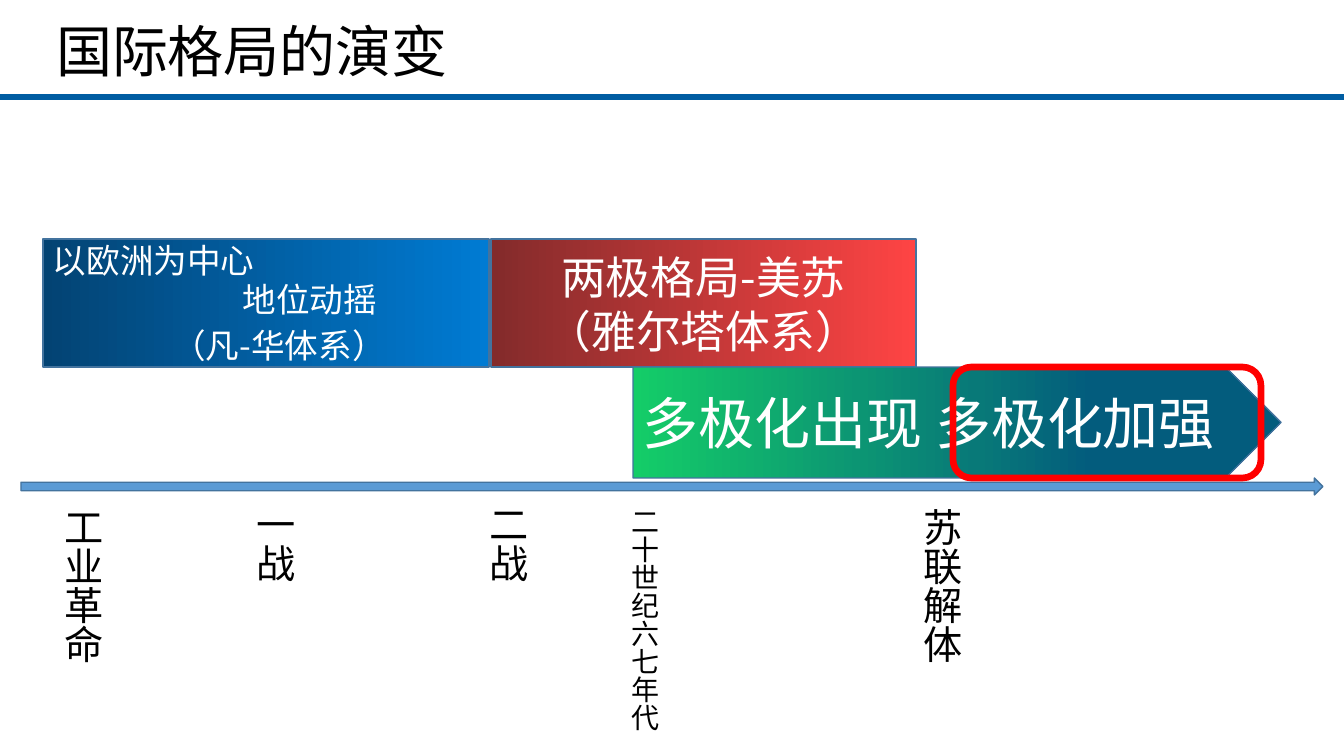
from lxml import etree
from pptx import Presentation
from pptx import util as u
from pptx.dml.color import RGBColor
from pptx.enum import shapes, text
from pptx.oxml.ns import qn

WHITE = RGBColor(0xFF, 0xFF, 0xFF)
BLACK = RGBColor(0, 0, 0)
RED = RGBColor(0xFF, 0, 0)
BLUE = RGBColor(0x00, 0x5D, 0xA2)
SKY = RGBColor(0x5B, 0x9B, 0xD5)
EDGE = RGBColor(0x43, 0x73, 0x9E)
NAVY = RGBColor(0x03, 0x43, 0x73)
AZURE = RGBColor(0x00, 0x7B, 0xD3)
WINE = RGBColor(0x83, 0x2B, 0x2B)
CORAL = RGBColor(0xFE, 0x44, 0x44)
GREEN = RGBColor(0x14, 0xCD, 0x68)
JADE = RGBColor(0x0C, 0x95, 0x73)
TEAL = RGBColor(0x08, 0x79, 0x78)
DEEP = RGBColor(0x03, 0x5C, 0x7D)

FONT = "Noto Sans CJK SC"
KIND = shapes.MSO_SHAPE
LEFT = text.PP_ALIGN.LEFT
MID = text.PP_ALIGN.CENTER


def px(n):
    return u.Emu(round(n * 914400 / 100.8))


def write(para, words, size=28, color=BLACK, align=LEFT, pitch=None, indent=0):
    para.alignment = align
    if pitch:
        para.line_spacing = u.Pt(pitch)
    if indent:
        props = para._p.get_or_add_pPr()
        props.set("marL", str(px(indent)))
        props.set("indent", "0")
    run = para.add_run()
    run.text = words
    run.font.size = u.Pt(size)
    run.font.color.rgb = color
    run.font.name = FONT
    etree.SubElement(run._r.rPr, qn("a:ea")).set("typeface", FONT)


class Board:
    """Draws styled elements on one slide."""

    def __init__(self, slide):
        self.slide = slide

    def title(self, words, *box):
        head = self.slide.shapes.title
        head.left, head.top, head.width, head.height = map(px, box)
        head.text_frame.vertical_anchor = text.MSO_ANCHOR.MIDDLE
        write(head.text_frame.paragraphs[0], words, size=40)

    def rule(self, y, width):
        line = self.slide.shapes.add_connector(
            shapes.MSO_CONNECTOR.STRAIGHT, 0, px(y), px(width), px(y))
        line.line.color.rgb = BLUE
        line.line.width = u.Pt(4)
        etree.SubElement(line._element.spPr, qn("a:effectLst"))

    def shape(self, kind, *box, fill=None, edge=EDGE, width=1):
        item = self.slide.shapes.add_shape(kind, *map(px, box))
        item.shadow.inherit = False
        item.line.color.rgb = edge
        item.line.width = u.Pt(width)
        if fill:
            item.fill.solid()
            item.fill.fore_color.rgb = fill
        else:
            item.fill.background()
        return item

    def era(self, kind, *box, stops, lines):
        item = self.shape(kind, *box)
        item.fill.gradient()
        item.fill.gradient_angle = 0
        ramp = item._element.spPr.find(qn("a:gradFill")).find(qn("a:gsLst"))
        for old in list(ramp):
            ramp.remove(old)
        for pos, color in stops:
            stop = etree.SubElement(ramp, qn("a:gs"), pos=str(pos * 1000))
            etree.SubElement(stop, qn("a:srgbClr"), val=str(color))
        frame = item.text_frame
        frame.word_wrap = True
        frame.vertical_anchor = text.MSO_ANCHOR.MIDDLE
        for i, (words, style) in enumerate(lines):
            para = frame.add_paragraph() if i else frame.paragraphs[0]
            write(para, words, color=WHITE, **style)

    def label(self, words, *box, size=28):
        frame = self.slide.shapes.add_textbox(*map(px, box)).text_frame
        frame.word_wrap = False
        frame._txBody.bodyPr.set("vert", "eaVert")
        write(frame.paragraphs[0], words, size=size, pitch=size * 1.2)


def main():
    deck = Presentation()
    deck.slide_width, deck.slide_height = px(1344), px(756)
    board = Board(deck.slides.add_slide(deck.slide_layouts[5]))
    board.rule(97, 1344)
    board.title("国际格局的演变", 46, 11, 412, 78)
    board.shape(KIND.RIGHT_ARROW, 21, 478, 1302, 17, fill=SKY)
    board.era(KIND.RECTANGLE, 43, 239, 446, 128,
              stops=[(0, NAVY), (100, AZURE)],
              lines=[("以欧洲为中心", dict(size=24, pitch=28)),
                     ("地位动摇", dict(size=24, pitch=28, align=MID, indent=88)),
                     ("（凡-华体系）", dict(size=24, pitch=33, align=MID, indent=26))])
    board.era(KIND.RECTANGLE, 491, 239, 425, 128,
              stops=[(0, WINE), (100, CORAL)],
              lines=[(words, dict(size=32, pitch=39, align=MID))
                     for words in ("两极格局-美苏", "（雅尔塔体系）")])
    for words, x, y, high in (("工业革命", 43, 498, 167), ("一战", 235, 495, 89),
                              ("二战", 468, 495, 89), ("苏联解体", 902, 498, 167)):
        board.label(words, x, y, 68, high)
    board.label("二十世纪六七年代", 612, 498, 54, 234, size=20)
    board.era(KIND.PENTAGON, 633, 367, 648, 111,
              stops=[(0, GREEN), (35, JADE), (53, TEAL), (71, DEEP)],
              lines=[("多极化出现 多极化加强", dict(size=40))])
    board.shape(KIND.FLOWCHART_ALTERNATE_PROCESS, 953, 367, 308, 111,
                edge=RED, width=4.75)
    deck.save("out.pptx")


if __name__ == "__main__":
    main()
